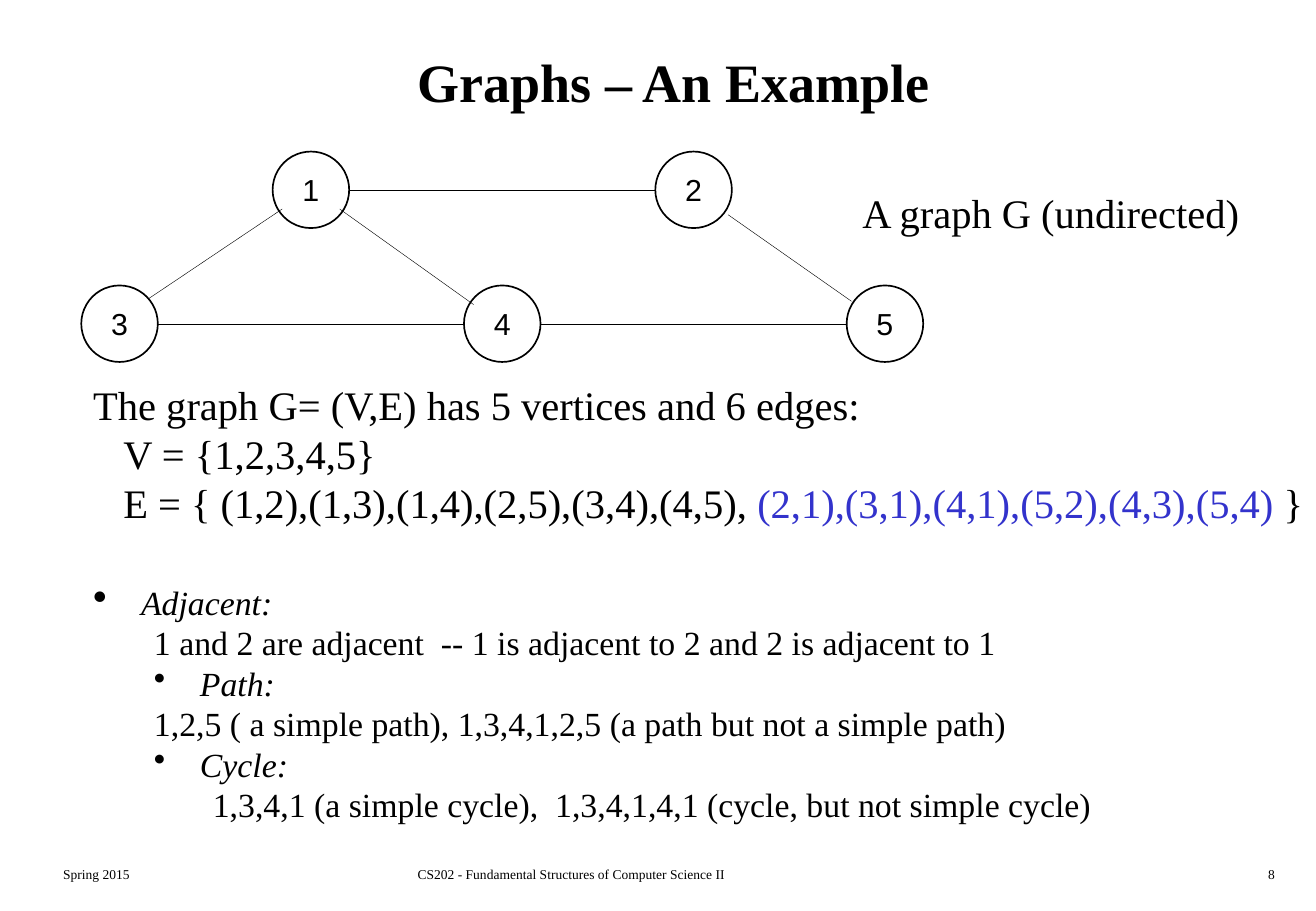
from dataclasses import dataclass

from lxml.etree import SubElement
from pptx import Presentation
from pptx.dml.color import RGBColor
from pptx.enum.shapes import MSO_CONNECTOR, MSO_SHAPE
from pptx.enum.text import MSO_ANCHOR, PP_ALIGN
from pptx.oxml.ns import qn
from pptx.shapes.shapetree import SlideShapes
from pptx.text.text import TextFrame, _Paragraph
from pptx.util import Cm, Pt


@dataclass(frozen=True)
class Theme:
    ink: RGBColor = RGBColor(0x00, 0x00, 0x00)
    reverse_edges: RGBColor = RGBColor(0x33, 0x33, 0xCC)
    serif: str = "Times New Roman"
    sans: str = "Arial"
    title: float = 32
    statement: float = 24
    definition: float = 20
    vertex: float = 18
    footer: float = 8
    outline: float = 1
    edge: float = 0.25


THEME = Theme()


@dataclass(frozen=True)
class Span:
    text: str
    size: float
    color: RGBColor = THEME.ink
    font: str = THEME.serif
    bold: bool = False
    italic: bool = False


@dataclass(frozen=True)
class Label:
    span: Span
    left: float
    top: float
    width: float
    height: float
    align: PP_ALIGN = PP_ALIGN.LEFT
    anchor: MSO_ANCHOR = MSO_ANCHOR.TOP
    wrap: bool = True


@dataclass(frozen=True)
class Line:
    spans: tuple[Span, ...]
    pitch: float
    indent: float = 0
    hanging: float = 0
    before: float = 0
    bullet_percent: int = 100
    tab: float = 0


@dataclass(frozen=True)
class Vertex:
    column: int
    row: int

    @property
    def center(self) -> tuple[float, float]:
        return 2.5 + 4 * self.column, 3.97 + 2.8 * self.row


@dataclass(frozen=True)
class Edge:
    start: int
    end: int
    leave: tuple[float, float] = (0.8, 0)
    arrive: tuple[float, float] = (-0.8, 0)


DIAMETER = 1.6
VERTICES = {1: Vertex(1, 0), 4: Vertex(2, 1), 2: Vertex(3, 0), 5: Vertex(4, 1), 3: Vertex(0, 1)}
EDGES = (
    Edge(1, 4, (0.6, 0.4), (-0.6, -0.4)),
    Edge(1, 2),
    Edge(2, 5, (0.72, 0.52), (-0.7, -0.47)),
    Edge(3, 4),
    Edge(4, 5),
    Edge(1, 3, (-0.6, 0.4), (0.6, -0.52)),
)

LABELS = (
    Label(Span("Spring 2015", THEME.footer), 1.07, 17.98, 5.74, 0.64),
    Label(Span("CS202 - Fundamental Structures of Computer Science II", THEME.footer),
          8.48, 17.98, 10.31, 0.64),
    Label(Span("8", THEME.footer), 21.16, 17.98, 5.74, 0.64, PP_ALIGN.RIGHT),
    Label(Span("Graphs – An Example", THEME.title, bold=True),
          1.07, 0.43, 26.04, 2.54, PP_ALIGN.CENTER, MSO_ANCHOR.MIDDLE),
    Label(Span("A graph G (undirected)", THEME.statement), 17.78, 3.81, 8.43, 1.27, wrap=False),
)


def statement(*spans: Span, indent: float = 0) -> Line:
    return Line(spans, 29, indent)


def term(text: str, indent: float, hanging: float, before: float = 0, percent: int = 100) -> Line:
    return Line((Span(text, THEME.definition, italic=True),), 24, indent, hanging, before, percent)


def example(text: str, indent: float, tab: float = 0) -> Line:
    return Line((Span(text, THEME.definition),), 24, indent, tab=tab)


EXPLANATION = (
    statement(Span("The graph G= (V,E) has 5 vertices and 6 edges:", THEME.statement)),
    statement(Span("V = {1,2,3,4,5}", THEME.statement), indent=0.63),
    statement(
        Span("E = { (1,2),(1,3),(1,4),(2,5),(3,4),(4,5), ", THEME.statement),
        Span("(2,1),(3,1),(4,1),(5,2),(4,3),(5,4)", THEME.statement, THEME.reverse_edges),
        Span(" }", THEME.statement),
        indent=0.63,
    ),
    term("Adjacent:", 0, 1, before=32.5, percent=120),
    example("1 and 2 are adjacent  -- 1 is adjacent to 2 and 2 is adjacent to 1", 1.27),
    term("Path:", 1.27, 0.96),
    example("1,2,5 ( a simple path),\t1,3,4,1,2,5 (a path but not a simple path)", 1.27, 8.33),
    term("Cycle:", 1.27, 0.96),
    example("1,3,4,1 (a simple cycle),  1,3,4,1,4,1 (cycle, but not simple cycle)", 2.5),
)


def apply_format(target: object, values: dict[str, object]) -> None:
    for name, value in values.items():
        setattr(target, name, value)


def write_span(paragraph: _Paragraph, span: Span) -> None:
    run = paragraph.add_run()
    run.text = span.text
    apply_format(run.font, {"name": span.font, "size": Pt(span.size),
                            "bold": span.bold, "italic": span.italic})
    run.font.color.rgb = span.color


def write_line(paragraph: _Paragraph, line: Line) -> None:
    apply_format(paragraph, {"line_spacing": Pt(line.pitch), "space_before": Pt(line.before)})
    properties = paragraph._p.get_or_add_pPr()
    if line.hanging:
        properties.set("marL", str(Cm(line.indent + line.hanging)))
        properties.set("indent", str(Cm(-line.hanging)))
        SubElement(properties, qn("a:buSzPct"), val=str(line.bullet_percent * 1000))
        SubElement(properties, qn("a:buChar"), char="•")
    else:
        properties.set("marL", "0")
        properties.set("indent", str(Cm(line.indent)))
    if line.tab:
        stops = SubElement(properties, qn("a:tabLst"))
        SubElement(stops, qn("a:tab"), pos=str(Cm(line.tab)), algn="l")
    for span in line.spans:
        write_span(paragraph, span)


def draw_label(shapes: SlideShapes, label: Label) -> None:
    box = shapes.add_textbox(Cm(label.left), Cm(label.top), Cm(label.width), Cm(label.height))
    frame = box.text_frame
    apply_format(frame, {"word_wrap": label.wrap, "vertical_anchor": label.anchor})
    frame.paragraphs[0].alignment = label.align
    write_span(frame.paragraphs[0], label.span)


def draw_edge(shapes: SlideShapes, edge: Edge) -> None:
    start_x, start_y = VERTICES[edge.start].center
    end_x, end_y = VERTICES[edge.end].center
    connector = shapes.add_connector(
        MSO_CONNECTOR.STRAIGHT,
        Cm(start_x + edge.leave[0]), Cm(start_y + edge.leave[1]),
        Cm(end_x + edge.arrive[0]), Cm(end_y + edge.arrive[1]),
    )
    connector.line.width = Pt(THEME.edge)
    connector.line.color.rgb = THEME.ink
    SubElement(connector._element.spPr, qn("a:effectLst"))


def draw_vertex(shapes: SlideShapes, number: int, vertex: Vertex) -> None:
    x, y = vertex.center
    circle = shapes.add_shape(MSO_SHAPE.OVAL, Cm(x - DIAMETER / 2), Cm(y - DIAMETER / 2),
                              Cm(DIAMETER), Cm(DIAMETER))
    circle.shadow.inherit = False
    circle.fill.background()
    circle.line.width = Pt(THEME.outline)
    circle.line.color.rgb = THEME.ink
    frame: TextFrame = circle.text_frame
    apply_format(frame, {"word_wrap": False, "vertical_anchor": MSO_ANCHOR.MIDDLE})
    frame.paragraphs[0].alignment = PP_ALIGN.CENTER
    write_span(frame.paragraphs[0], Span(str(number), THEME.vertex, font=THEME.sans))


def draw_explanation(shapes: SlideShapes) -> None:
    frame = shapes.add_textbox(Cm(1.7), Cm(7.82), Cm(25.81), Cm(9.55)).text_frame
    frame.word_wrap = False
    for index, line in enumerate(EXPLANATION):
        write_line(frame.add_paragraph() if index else frame.paragraphs[0], line)


def main() -> None:
    presentation = Presentation()
    apply_format(presentation, {"slide_width": Cm(27.51), "slide_height": Cm(19.05)})
    shapes = presentation.slides.add_slide(presentation.slide_layouts[6]).shapes
    for label in LABELS:
        draw_label(shapes, label)
    for edge in EDGES:
        draw_edge(shapes, edge)
    for number, vertex in VERTICES.items():
        draw_vertex(shapes, number, vertex)
    draw_explanation(shapes)
    presentation.save("out.pptx")


if __name__ == "__main__":
    main()
